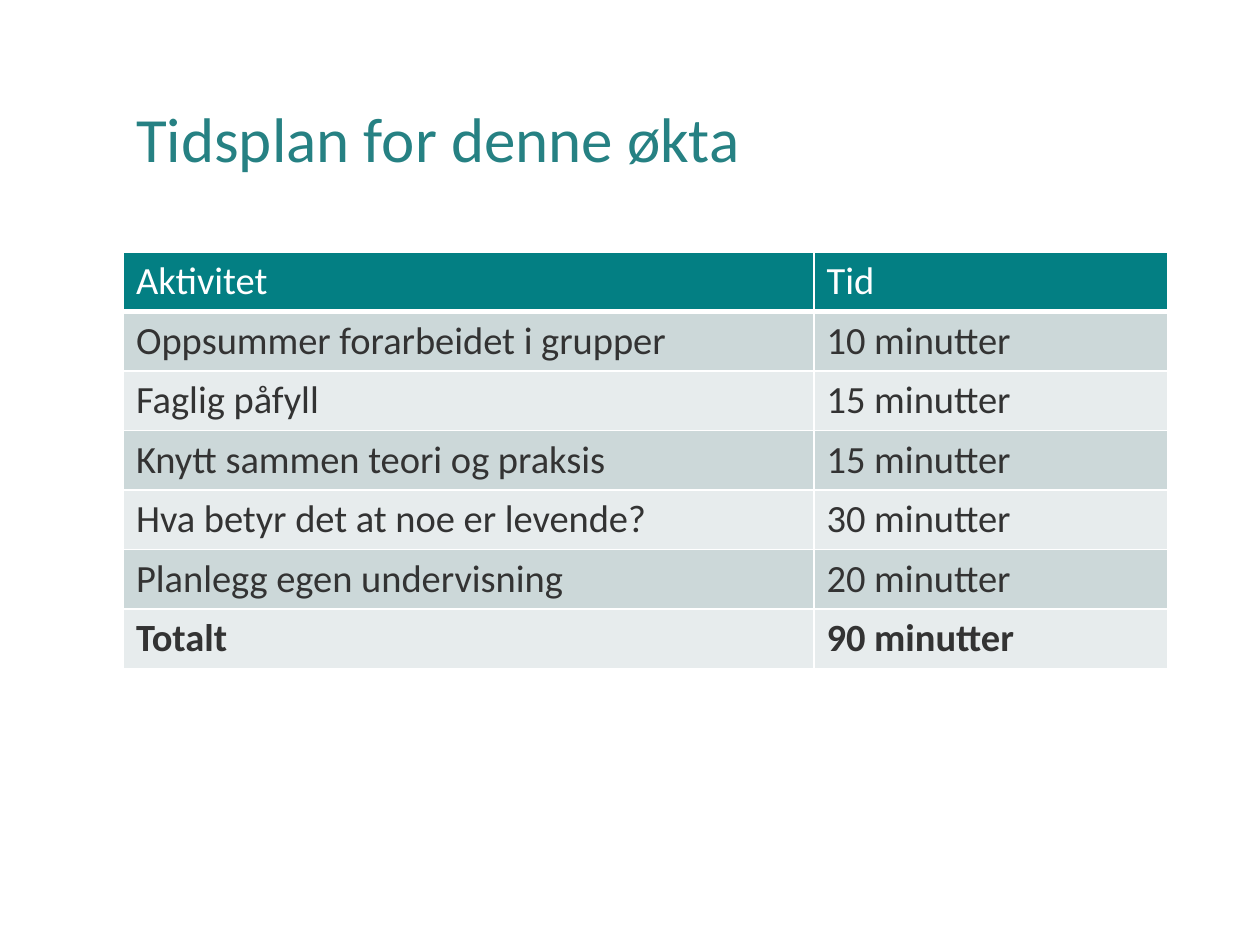
"""Build a slide with the timetable of a teaching session."""
from lxml import etree
from pptx import Presentation
from pptx.dml.color import RGBColor
from pptx.enum.text import MSO_ANCHOR, PP_ALIGN
from pptx.oxml.ns import qn
from pptx.util import Cm, Pt

MIDDLE = MSO_ANCHOR.MIDDLE
LEFT = PP_ALIGN.LEFT
FONT = "Calibri"
WHITE = "FFFFFF"
HEADER_FILL = "037F83"
BAND_FILLS = ("CCD8D9", "E7ECED")
ROW_HEIGHT = 1.19
COLUMN_WIDTHS = (13.92, 7.14)
SCHEDULE = (
    ("Aktivitet", "Tid"),
    ("Oppsummer forarbeidet i grupper", "10 minutter"),
    ("Faglig påfyll", "15 minutter"),
    ("Knytt sammen teori og praksis", "15 minutter"),
    ("Hva betyr det at noe er levende?", "30 minutter"),
    ("Planlegg egen undervisning", "20 minutter"),
    ("Totalt", "90 minutter"),
)


def color(value):
    """Return the colour for a hex string."""
    return RGBColor.from_string(value)


def add_span(para, text, size, font_color, bold=False):
    """Add one formatted run to a paragraph."""
    span = para.add_run()
    span.text = text
    span.font.name = FONT
    span.font.size = Pt(size)
    span.font.bold = bold
    span.font.color.rgb = color(font_color)


def add_title(page, text):
    """Place and fill the title placeholder."""
    box = page.shapes.title
    box.left, box.top, box.width, box.height = Cm(2.49), Cm(1.02), Cm(21.06), Cm(3.68)
    frame = box.text_frame
    frame.word_wrap = True
    frame.vertical_anchor = MIDDLE
    para = frame.paragraphs[0]
    para.alignment = LEFT
    para.line_spacing = 0.9
    add_span(para, text, 36, "268183")


def set_borders(cell, widths):
    """Draw white borders with the given widths by side."""
    properties = cell._tc.get_or_add_tcPr()
    for side, width in widths.items():
        line = etree.SubElement(properties, qn(f"a:ln{side}"), w=str(Pt(width)))
        fill = etree.SubElement(line, qn("a:solidFill"))
        etree.SubElement(fill, qn("a:srgbClr"), val=WHITE)


def fill_cell(cell, text, row_index):
    """Write and format a cell according to its row."""
    header = row_index == 0
    total = row_index == len(SCHEDULE) - 1
    set_borders(cell, {"L": 1, "R": 1, "T": 3 if row_index == 1 else 1, "B": 3 if header else 1})
    cell.fill.solid()
    cell.fill.fore_color.rgb = color(HEADER_FILL if header else BAND_FILLS[(row_index - 1) % 2])
    add_span(cell.text_frame.paragraphs[0], text, 22, WHITE if header else "333333", total)


def add_schedule(page):
    """Add the table of activities and times."""
    table = page.shapes.add_table(
        len(SCHEDULE), len(COLUMN_WIDTHS), Cm(2.49), Cm(5.08),
        Cm(sum(COLUMN_WIDTHS)), Cm(ROW_HEIGHT * len(SCHEDULE)),
    ).table
    for column, width in zip(table.columns, COLUMN_WIDTHS):
        column.width = Cm(width)
    for row_index, texts in enumerate(SCHEDULE):
        table.rows[row_index].height = Cm(ROW_HEIGHT)
        for column_index, text in enumerate(texts):
            fill_cell(table.cell(row_index, column_index), text, row_index)


def main():
    """Build and save the deck."""
    deck = Presentation()
    deck.slide_width, deck.slide_height = Cm(25.4), Cm(19.05)
    page = deck.slides.add_slide(deck.slide_layouts[5])
    add_title(page, "Tidsplan for denne økta")
    add_schedule(page)
    deck.save("out.pptx")


if __name__ == "__main__":
    main()
